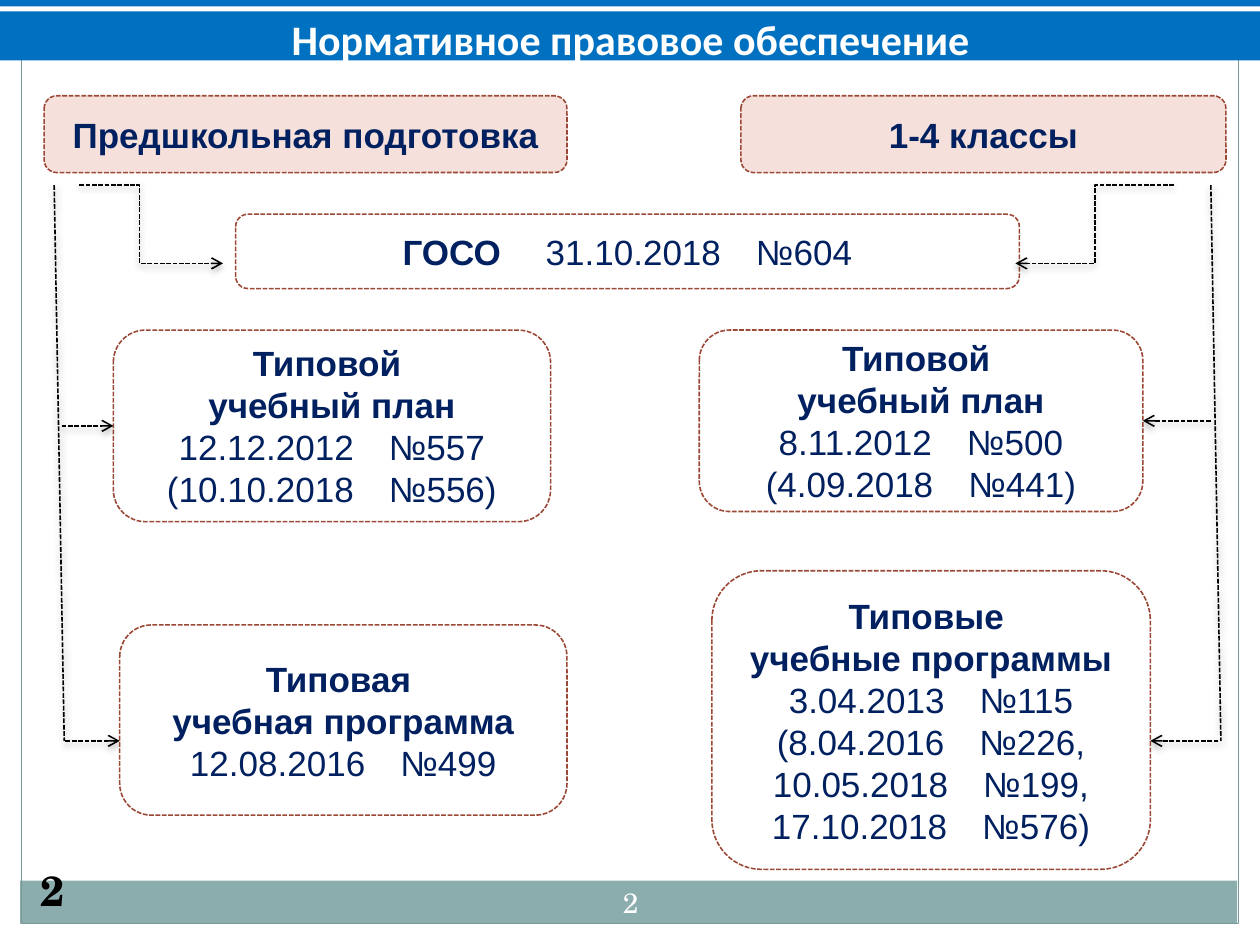
from lxml import etree
from pptx import Presentation
from pptx import util as u
from pptx.dml.color import RGBColor
from pptx.enum import dml, shapes, text
from pptx.oxml import parse_xml
from pptx.oxml.ns import nsdecls, qn

PX = 9144  # 100 px to the inch
BLUE = RGBColor(0x00, 0x70, 0xC0)
NAVY = RGBColor(0x00, 0x20, 0x60)
WHITE = RGBColor(0xFF, 0xFF, 0xFF)
BLACK = RGBColor(0x00, 0x00, 0x00)
PINK = RGBColor(0xF6, 0xE0, 0xDB)
RUST = RGBColor(0x9B, 0x49, 0x36)
SAGE = RGBColor(0x8C, 0xAD, 0xAE)
FRAME = RGBColor(0x7C, 0x99, 0x9A)

deck = Presentation()
deck.slide_width, deck.slide_height = 1000 * PX, 750 * PX
page = deck.slides.add_slide(deck.slide_layouts[5])

# Bands and frame
for left, top, width, height, fill, line in [
    (16, 699, 966, 34, SAGE, None),
    (17, 17, 966, 716, None, FRAME),
    (0, 9, 1000, 39, BLUE, None),
    (0, 0, 1000, 5, BLUE, None),
]:
    band = page.shapes.add_shape(
        shapes.MSO_SHAPE.RECTANGLE, left * PX, top * PX, width * PX, height * PX)
    band.shadow.inherit = False
    if fill is None:
        band.fill.background()
        band.line.color.rgb = line
        band.line.width = u.Pt(0.75)
    else:
        band.fill.solid()
        band.fill.fore_color.rgb = fill
        band.line.fill.background()

# Title, brought in front of the bands
title = page.shapes.title
title.left, title.top, title.width, title.height = 18 * PX, 6 * PX, 965 * PX, 51 * PX
title.text_frame.text = "Нормативное правовое обеспечение"
title.text_frame.auto_size = text.MSO_AUTO_SIZE.NONE
title.text_frame.vertical_anchor = text.MSO_ANCHOR.TOP
para = title.text_frame.paragraphs[0]
para.alignment = text.PP_ALIGN.CENTER
para.font.name, para.font.size, para.font.bold = "Calibri", u.Pt(24), True
para.font.color.rgb = WHITE
title.element.getparent().append(title.element)

# Boxes: place, fill, bold lines, plain lines; an em space parts date and number
boxes = {}
for name, (left, top, width, height), fill, heads, dates in [
    ("standard", (187, 170, 622, 59), WHITE, [], ["ГОСО 31.10.2018 №604"]),
    ("preschool plan", (90, 262, 347, 152), WHITE,
     ["Типовой ", "учебный план"], ["12.12.2012 №557", "(10.10.2018 №556)"]),
    ("preschool programme", (95, 496, 355, 151), WHITE,
     ["Типовая ", "учебная программа"], ["12.08.2016 №499"]),
    ("school plan", (555, 262, 352, 144), WHITE,
     ["Типовой ", "учебный план"], ["8.11.2012 №500", "(4.09.2018 №441)"]),
    ("school programmes", (565, 453, 348, 237), WHITE,
     ["Типовые ", "учебные программы"],
     ["3.04.2013 №115", "(8.04.2016 №226,", "10.05.2018 №199,", "17.10.2018 №576)"]),
    ("preschool", (35, 76, 415, 61), PINK, ["Предшкольная подготовка"], []),
    ("school", (588, 76, 385, 61), PINK, ["1-4 классы"], []),
]:
    box = boxes[name] = page.shapes.add_shape(
        shapes.MSO_SHAPE.ROUNDED_RECTANGLE, left * PX, top * PX, width * PX, height * PX)
    box.shadow.inherit = False
    box.fill.solid()
    box.fill.fore_color.rgb = fill
    box.line.color.rgb = RUST
    box.line.width = u.Pt(0.9)
    box.line.dash_style = dml.MSO_LINE.SQUARE_DOT
    frame = box.text_frame
    frame.vertical_anchor = text.MSO_ANCHOR.MIDDLE
    for index, line in enumerate(heads + dates):
        para = frame.add_paragraph() if index else frame.paragraphs[0]
        para.alignment = text.PP_ALIGN.CENTER
        para.font.name, para.font.size = "Arial", u.Pt(20)
        para.font.color.rgb = NAVY
        label, mark, rest = line.partition("ГОСО")
        if mark:
            span = para.add_run()
            span.text = mark
            span.font.bold = True
            line = rest
        para.font.bold = index < len(heads)
        # The gap is an em space, set wider by tracking where it is needed
        para.add_run().text = line.replace(" №", "\u2003№").replace(" 3", "\u2003 3")

SHADOW = (f'<a:effectLst {nsdecls("a")}>'
          '<a:outerShdw blurRad="50800" dist="25400" dir="5400000" rotWithShape="0">'
          '<a:srgbClr val="000000"><a:alpha val="35000"/></a:srgbClr>'
          '</a:outerShdw></a:effectLst>')


def connect(start, end, arrow=True, bend=None, target=None, side=None):
    """Dashed black line; bend is the elbow's share of the width."""
    kind = shapes.MSO_CONNECTOR.STRAIGHT if bend is None else shapes.MSO_CONNECTOR.ELBOW
    link = page.shapes.add_connector(kind, *(value * PX for value in (*start, *end)))
    link.line.color.rgb = BLACK
    link.line.width = u.Pt(0.9)
    link.line.dash_style = dml.MSO_LINE.SQUARE_DOT
    if target is not None:
        link.end_connect(target, side)
    properties = link.element.spPr
    if arrow:
        etree.SubElement(properties.find(qn("a:ln")), qn("a:tailEnd"), type="arrow")
    if bend is not None:
        guides = properties.find(qn("a:prstGeom")).get_or_add_avLst()
        etree.SubElement(guides, qn("a:gd"), name="adj1", fmla=f"val {round(bend * 100000)}")
    properties.append(parse_xml(SHADOW))


connect((63, 147), (177, 209), bend=0.42)
connect((932, 147), (806, 209), bend=0.5)
connect((43, 147), (51, 588), arrow=False)
connect((961, 147), (969, 588), arrow=False)
connect((52, 588), (95, 588))
connect((967, 588), (913, 588))
connect((961, 334), (907, 334), target=boxes["school plan"], side=3)
connect((49, 338), (90, 338), target=boxes["preschool plan"], side=1)

# Page numbers
for left, top, width, height, size, color, bold, align, anchor in [
    (467, 692, 67, 48, 16, WHITE, False, text.PP_ALIGN.CENTER, text.MSO_ANCHOR.MIDDLE),
    (22, 681, 52, 51, 24, BLACK, True, text.PP_ALIGN.LEFT, text.MSO_ANCHOR.TOP),
]:
    number = page.shapes.add_textbox(left * PX, top * PX, width * PX, height * PX)
    number.text_frame.word_wrap = True
    number.text_frame.vertical_anchor = anchor
    para = number.text_frame.paragraphs[0]
    para.text = "2"
    para.alignment = align
    para.font.name, para.font.size, para.font.bold = "TeX Gyre Schola", u.Pt(size), bold
    para.font.color.rgb = color

deck.save("out.pptx")
